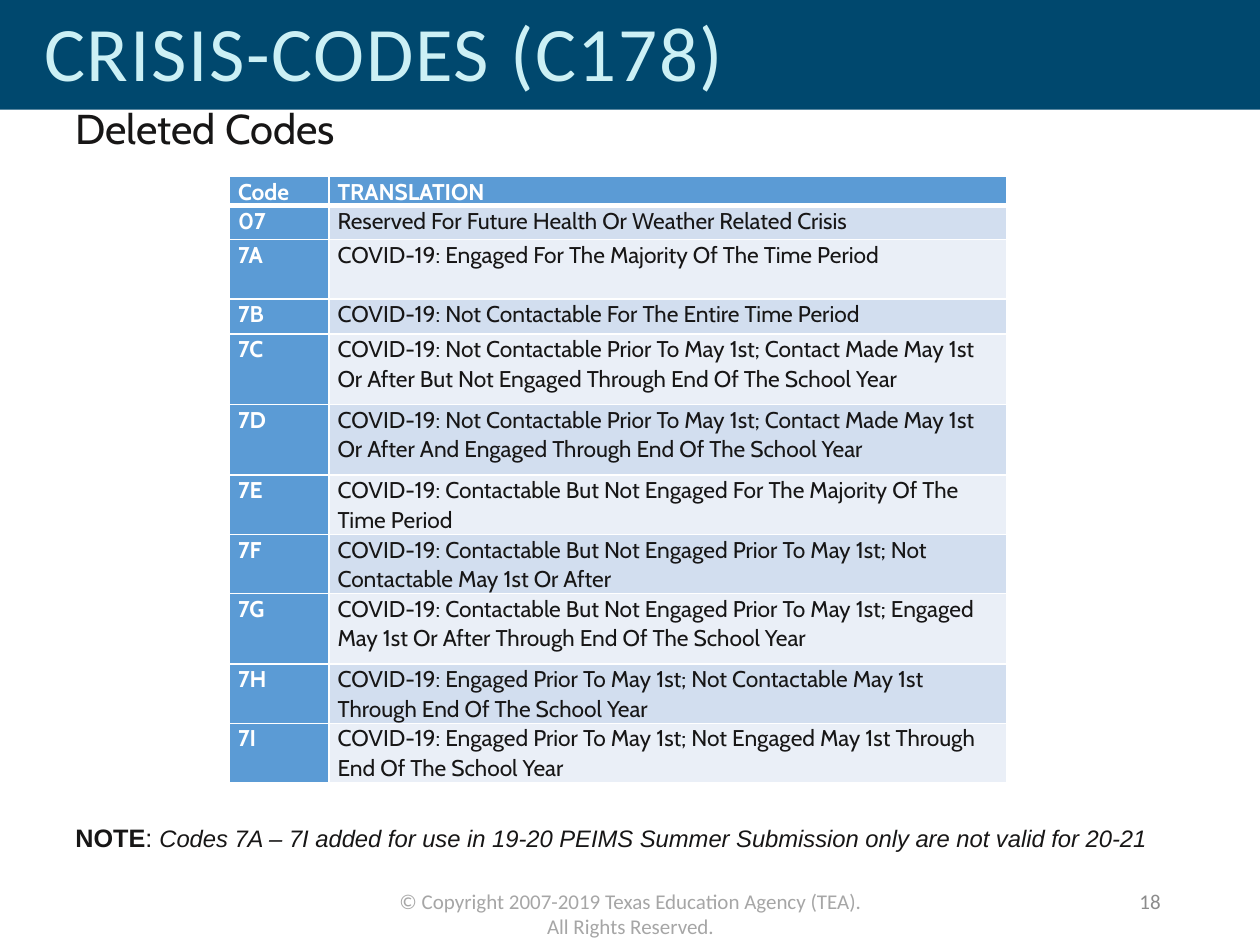
from lxml.etree import SubElement
from pptx import Presentation
from pptx.dml.color import RGBColor
from pptx.enum.shapes import MSO_SHAPE
from pptx.enum.text import MSO_ANCHOR, MSO_AUTO_SIZE, PP_ALIGN
from pptx.oxml.ns import qn
from pptx.util import Inches, Pt

NAVY = RGBColor(0x00, 0x48, 0x6E)
AQUA = RGBColor(0xCC, 0xF0, 0xF5)
INK = RGBColor(0x17, 0x16, 0x16)
WHITE = RGBColor(0xFF, 0xFF, 0xFF)
BLUE = RGBColor(0x5B, 0x9B, 0xD5)
BANDS = [RGBColor(0xD2, 0xDE, 0xEF), RGBColor(0xEA, 0xEF, 0xF7)]
GREY = RGBColor(0xA6, 0xA6, 0xA6)
DIM = RGBColor(0x8C, 0x8C, 0x8C)

# Content: code, translation, row height
ROWS = [
    ("Code", "TRANSLATION", 0.23),
    ("07", "Reserved For Future Health Or Weather Related Crisis", 0.27),
    ("7A", "COVID-19: Engaged For The Majority Of The Time Period", 0.47),
    ("7B", "COVID-19: Not Contactable For The Entire Time Period", 0.28),
    ("7C", "COVID-19: Not Contactable Prior To May 1st; Contact Made May 1st "
           "Or After But Not Engaged Through End Of The School Year", 0.56),
    ("7D", "COVID-19: Not Contactable Prior To May 1st; Contact Made May 1st "
           "Or After And Engaged Through End Of The School Year", 0.56),
    ("7E", "COVID-19: Contactable But Not Engaged For The Majority Of The "
           "Time Period", 0.47),
    ("7F", "COVID-19: Contactable But Not Engaged Prior To May 1st; Not "
           "Contactable May 1st Or After", 0.47),
    ("7G", "COVID-19: Contactable But Not Engaged Prior To May 1st; Engaged "
           "May 1st Or After Through End Of The School Year", 0.56),
    ("7H", "COVID-19: Engaged Prior To May 1st; Not Contactable May 1st "
           "Through End Of The School Year", 0.47),
    ("7I", "COVID-19: Engaged Prior To May 1st; Not Engaged May 1st Through "
           "End Of The School Year", 0.47),
]
COLS = [0.79, 5.38]
NOTE = [
    ("NOTE", 14.4, True, False),
    (": ", 14.4, False, False),
    ("Codes 7A – 7I added for use in 19-20 PEIMS Summer Submission only "
     "are not valid for 20-21", 13.6, False, True),
]
RIGHTS = "© Copyright 2007-2019 Texas Education Agency (TEA). All Rights Reserved."


def add_run(para, text, font, size, color, bold=False, italic=False):
    run = para.add_run()
    run.text = text
    run.font.name = font
    run.font.size = Pt(size)
    run.font.color.rgb = color
    run.font.bold = bold
    run.font.italic = italic
    return run


def add_box(slide, box, align=PP_ALIGN.LEFT, space=1.0, anchor=MSO_ANCHOR.TOP):
    frame = slide.shapes.add_textbox(*map(Inches, box)).text_frame
    frame.word_wrap = True
    frame.vertical_anchor = anchor
    para = frame.paragraphs[0]
    para.alignment = align
    para.line_spacing = space
    return para


def add_edge(cell, side, width):
    line = SubElement(cell._tc.get_or_add_tcPr(), qn("a:" + side), w=str(Pt(width)))
    fill = SubElement(line, qn("a:solidFill"))
    SubElement(fill, qn("a:srgbClr"), val=str(WHITE))


def fill_cell(cell, text, row, col):
    head = row == 0 or col == 0
    cell.margin_left = cell.margin_right = Inches(0.07)
    cell.margin_top = cell.margin_bottom = 0
    for side in ("lnL", "lnR", "lnT", "lnB"):
        thick = (row, side) in ((0, "lnB"), (1, "lnT"))
        add_edge(cell, side, 3 if thick else 1)
    cell.fill.solid()
    cell.fill.fore_color.rgb = BLUE if head else BANDS[(row - 1) % 2]
    para = cell.text_frame.paragraphs[0]
    para.line_spacing = 1.07
    add_run(para, text, "Cabin", 13, WHITE if head else INK, bold=head)


def main():
    deck = Presentation()
    deck.slide_width, deck.slide_height = Inches(10), Inches(7.5)
    slide = deck.slides.add_slide(deck.slide_layouts[5])
    title = slide.shapes.title

    # Banner, kept behind the title
    band = slide.shapes.add_shape(MSO_SHAPE.RECTANGLE, 0, 0, Inches(10), Inches(0.87))
    band.shadow.inherit = False
    band.fill.solid()
    band.fill.fore_color.rgb = NAVY
    band.line.fill.background()
    title._element.addprevious(band._element)

    # Title
    title.left, title.top = Inches(0.25), Inches(0.01)
    title.width, title.height = Inches(8.62), Inches(0.87)
    frame = title.text_frame
    frame.auto_size = MSO_AUTO_SIZE.NONE
    frame.vertical_anchor = MSO_ANCHOR.MIDDLE
    para = frame.paragraphs[0]
    para.alignment = PP_ALIGN.LEFT
    para.line_spacing = 0.9
    run = add_run(para, "CRISIS-CODES (C178)", "Calibri", 44, AQUA)
    run.font._element.set("spc", "100")

    # Heading and note
    para = add_box(slide, (0.5, 0.88, 8.81, 0.4), space=0.7)
    add_run(para, "Deleted Codes", "Cabin", 23.8, INK)
    para = add_box(slide, (0.5, 6.54, 8.81, 0.35), space=0.7)
    for text, size, bold, italic in NOTE:
        add_run(para, text, "Arial", size, INK, bold, italic)

    # Code table
    high = sum(row[2] for row in ROWS)
    table = slide.shapes.add_table(
        len(ROWS), len(COLS), Inches(1.82), Inches(1.4),
        Inches(sum(COLS)), Inches(high)).table
    for col, width in enumerate(COLS):
        table.columns[col].width = Inches(width)
    for row, (code, text, height) in enumerate(ROWS):
        table.rows[row].height = Inches(height)
        for col, words in enumerate((code, text)):
            fill_cell(table.cell(row, col), words, row, col)

    # Footer
    para = add_box(slide, (3.04, 7, 3.93, 0.5), PP_ALIGN.CENTER)
    add_run(para, RIGHTS, "Calibri", 12, GREY)
    para = add_box(slide, (7.06, 6.95, 2.25, 0.4), PP_ALIGN.RIGHT,
                   anchor=MSO_ANCHOR.MIDDLE)
    add_run(para, "18", "Calibri", 12, DIM)

    deck.save("out.pptx")


if __name__ == "__main__":
    main()
